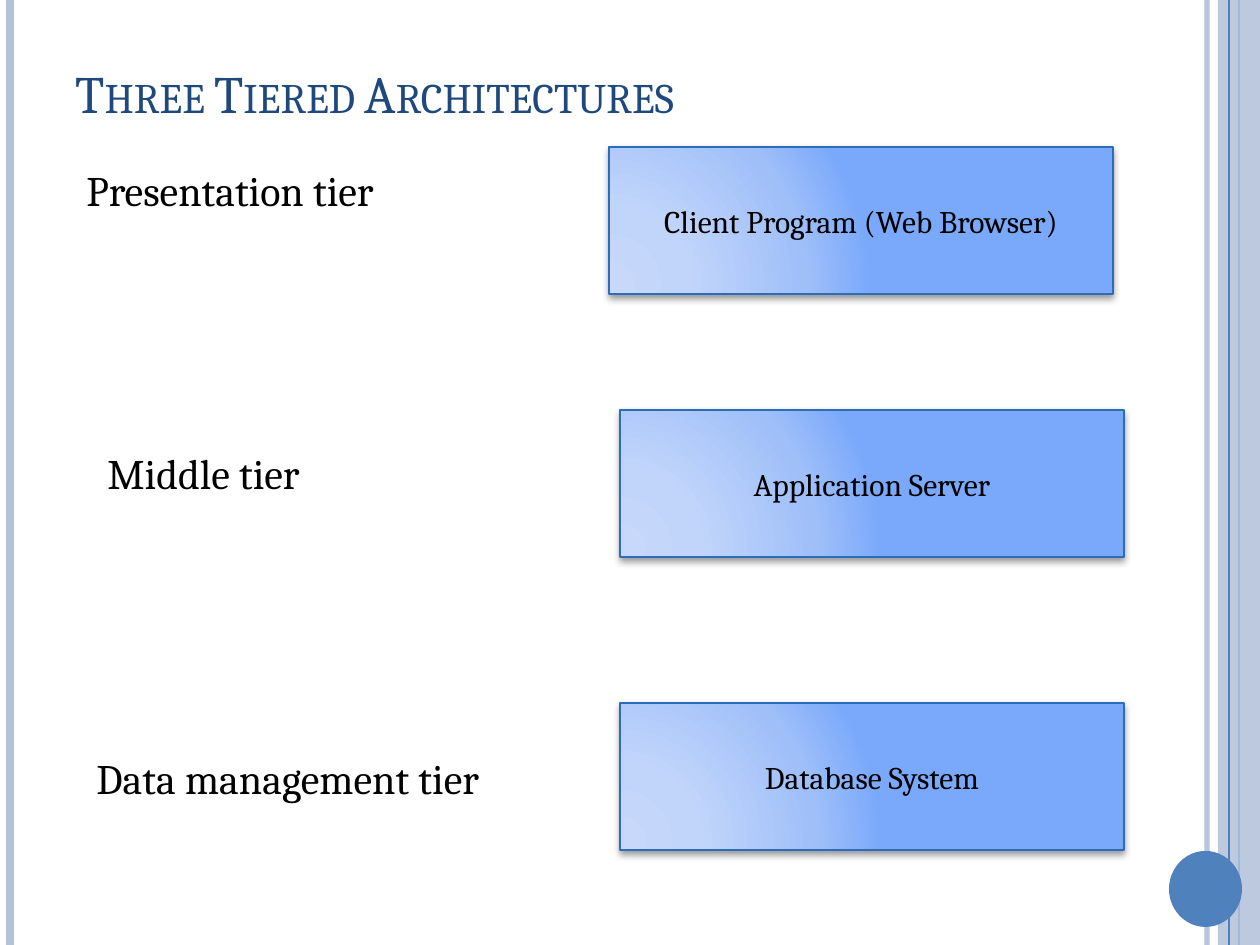
from lxml.etree import SubElement
from pptx import Presentation
from pptx.dml.color import RGBColor
from pptx.enum.shapes import MSO_CONNECTOR as CONNECTOR, MSO_SHAPE as SHAPE
from pptx.enum.text import MSO_ANCHOR as ANCHOR, PP_ALIGN as ALIGN
from pptx.oxml import parse_xml
from pptx.oxml.ns import nsdecls, qn
from pptx.util import Pt

PX = 7257.14  # EMU per px, 126 px to the inch
FONT = "Cambria"
COLORS = {
    "stripe": "B3C1DB",
    "accent": "4F81BD",
    "title": "1F497D",
    "text": "000000",
    "box_line": "2C6CB9",
}
BOX_STOPS = [(0, "C7D8FB"), (30, "C1D5FA"), (75, "9FBFF9"), (100, "7AA9FB")]


def px(*lengths):
    return [round(length * PX) for length in lengths]


def write(shape, text, size, color, anchor=ANCHOR.TOP, align=ALIGN.LEFT, before=0):
    frame = shape.text_frame
    frame.word_wrap = True
    frame.vertical_anchor = anchor
    frame.text = text
    paragraph = frame.paragraphs[0]
    paragraph.alignment = align
    paragraph.space_before = Pt(before)
    run = paragraph.runs[0]
    run.font.name = FONT
    run.font.size = Pt(size)
    run.font.color.rgb = RGBColor.from_string(COLORS[color])
    return run


presentation = Presentation()
presentation.slide_width, presentation.slide_height = px(1260, 945)
slide = presentation.slides.add_slide(presentation.slide_layouts[6])
shapes = slide.shapes

# Side decoration: stripes, translucent band and disc, back to front
decoration = [
    ("line", (1207, 3, "stripe", 93)),
    ("line", (10, 4.5, "stripe", 100)),
    ("line", (1239, 1.5, "accent", 100)),
    (SHAPE.RECTANGLE, (1218, 0, 42, 945, "stripe", 87)),
    ("line", (1229, 0.75, "accent", 100)),
    (SHAPE.OVAL, (1169, 851, 73, 76, "accent", 100)),
]
for kind, details in decoration:
    *numbers, color, opacity = details
    if kind == "line":
        x, width = numbers
        shape = shapes.add_connector(CONNECTOR.STRAIGHT, *px(x, 0, x, 945))
        shape.line.width = Pt(width)
        fill = shape.line.fill
        SubElement(shape._element.spPr, qn("a:effectLst"))
    else:
        shape = shapes.add_shape(kind, *px(*numbers))
        shape.shadow.inherit = False
        shape.line.fill.background()
        fill = shape.fill
    fill.solid()
    fill.fore_color.rgb = RGBColor.from_string(COLORS[color])
    if opacity < 100:
        color_element = next(shape._element.spPr.iter(qn("a:srgbClr")))
        SubElement(color_element, qn("a:alpha"), val=str(opacity * 1000))

# Title in small capitals
title = shapes.add_textbox(*px(63, 38, 1092, 110))
run = write(title, "Three Tiered Architectures", 30, "title", ANCHOR.MIDDLE)
run.font._element.set("cap", "small")

# Tier boxes with a radial gradient and a soft shadow
stops = "".join(
    f'<a:gs pos="{position * 1000}"><a:srgbClr val="{color}"/></a:gs>'
    for position, color in BOX_STOPS
)
gradient = (
    f'<a:gradFill {nsdecls("a")} rotWithShape="1"><a:gsLst>{stops}</a:gsLst>'
    '<a:path path="circle"><a:fillToRect l="5000" t="100000" r="120000" b="10000"/>'
    "</a:path></a:gradFill>"
)
shadow = (
    f'<a:outerShdw {nsdecls("a")} blurRad="{Pt(4)}" dist="{Pt(2)}" dir="5400000" '
    'rotWithShape="0"><a:srgbClr val="000000"><a:alpha val="40000"/></a:srgbClr>'
    "</a:outerShdw>"
)
boxes = [
    (609, 147, "Client Program (Web Browser)"),
    (620, 410, "Application Server"),
    (620, 703, "Database System"),
]
for left, top, text in boxes:
    box = shapes.add_shape(SHAPE.RECTANGLE, *px(left, top, 504, 147))
    box.line.color.rgb = RGBColor.from_string(COLORS["box_line"])
    box.line.width = Pt(1)
    box.shadow.inherit = False
    properties = box._element.spPr
    properties.find(qn("a:prstGeom")).addnext(parse_xml(gradient))
    properties.find(qn("a:effectLst")).append(parse_xml(shadow))
    write(box, text, 18, "text", ANCHOR.MIDDLE, ALIGN.CENTER)

# Tier labels
labels = [
    (74, 158, 388, "Presentation tier"),
    (95, 441, 388, "Middle tier"),
    (84, 746, 473, "Data management tier"),
]
for left, top, width, text in labels:
    label = shapes.add_textbox(*px(left, top, width, 95))
    write(label, text, 24, "text", before=6)

presentation.save("out.pptx")
